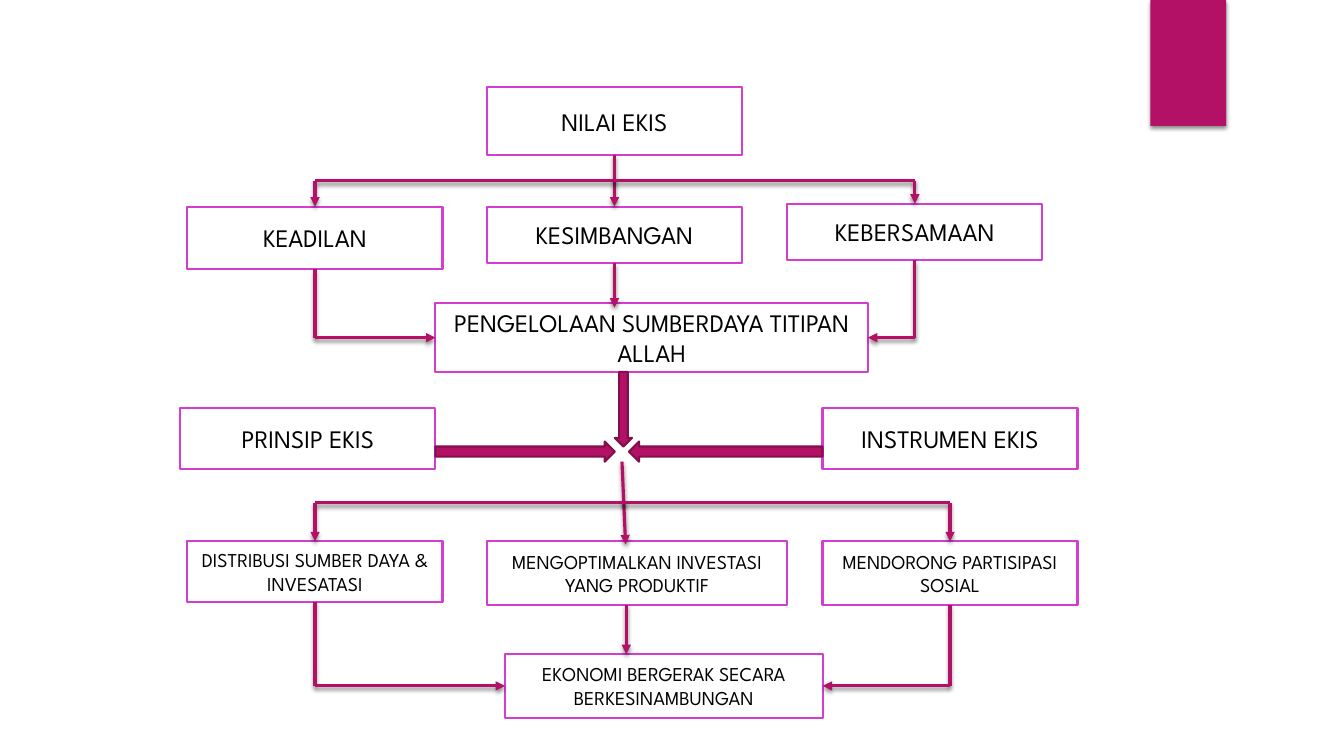
import typing

import lxml.etree
import pptx
import pptx.dml.color
import pptx.enum.shapes
import pptx.enum.text
import pptx.oxml
import pptx.oxml.ns
import pptx.util

# Grid: 100 columns by 100 rows over the slide
WIDE, HIGH = pptx.util.Inches(13.33), pptx.util.Inches(7.5)
FONT = "League Spartan"
PINK, DARK, EDGE = "B31166", "840D4B", "D53DD0"
TOP, LEFT, BASE, RIGHT = range(4)
KIND = pptx.enum.shapes.MSO_SHAPE


class Box(typing.NamedTuple):
    text: str
    col: float
    row: float
    wide: float
    high: float
    size: int = 18

    def port(self, side: int) -> tuple[float, float]:
        """Middle of one side, in grid units."""
        across = {LEFT: 0, RIGHT: 1}.get(side, 0.5)
        down = {TOP: 0, BASE: 1}.get(side, 0.5)
        return self.col + across * self.wide, self.row + down * self.high


class Port(typing.NamedTuple):
    box: str
    side: int


class Point(typing.NamedTuple):
    col: float
    row: float


class Link(typing.NamedTuple):
    start: Port | Point
    end: Port | Point
    head: bool = True


class Arrow(typing.NamedTuple):
    kind: KIND
    col: float
    row: float
    wide: float
    high: float


def x(cols: float) -> int:
    return round(WIDE * cols / 100)


def y(rows: float) -> int:
    return round(HIGH * rows / 100)


def paint(color: pptx.dml.color.ColorFormat, code: str) -> None:
    color.rgb = pptx.dml.color.RGBColor.from_string(code)


def tag(root: lxml.etree._Element, name: str, **attrs: str) -> lxml.etree._Element:
    return lxml.etree.SubElement(root, pptx.oxml.ns.qn(name), attrs)


def shade(item) -> None:
    """Soft shadow just below the item."""
    effect = tag(item._element.spPr, "a:effectLst")
    drop = tag(effect, "a:outerShdw", blurRad="38100", dist="25400",
               dir="5400000", rotWithShape="0")
    tag(tag(drop, "a:srgbClr", val="000000"), "a:alpha", val="45000")


def block(slide, kind: KIND, col: float, row: float, wide: float, high: float,
          fill: str, edge: str | None):
    shape = slide.shapes.add_shape(kind, x(col), y(row), x(wide), y(high))
    shape.fill.solid()
    paint(shape.fill.fore_color, fill)
    if edge:
        paint(shape.line.color, edge)
        shape.line.width = pptx.util.Pt(1.5)
        shape.shadow.inherit = False
    else:
        shape.line.fill.background()
        shade(shape)
    return shape


def draw_box(slide, box: Box):
    shape = block(slide, KIND.RECTANGLE, box.col, box.row, box.wide, box.high,
                  "FFFFFF", EDGE)
    frame = shape.text_frame
    frame.word_wrap = True
    frame.vertical_anchor = pptx.enum.text.MSO_ANCHOR.MIDDLE
    para = frame.paragraphs[0]
    para.alignment = pptx.enum.text.PP_ALIGN.CENTER
    run = para.add_run()
    run.text = box.text
    run.font.name = FONT
    run.font.size = pptx.util.Pt(box.size)
    paint(run.font.color, "000000")
    return shape


def place(end: Port | Point) -> tuple[float, float]:
    return BOXES[end.box].port(end.side) if isinstance(end, Port) else end


def draw_link(slide, link: Link, shapes: dict) -> None:
    (col, row), (to_col, to_row) = place(link.start), place(link.end)
    line = slide.shapes.add_connector(
        pptx.enum.shapes.MSO_CONNECTOR.STRAIGHT, x(col), y(row), x(to_col), y(to_row))
    for end, join in ((link.start, line.begin_connect), (link.end, line.end_connect)):
        if isinstance(end, Port):
            join(shapes[end.box], end.side)
    paint(line.line.color, PINK)
    line.line.width = pptx.util.Pt(2.25)
    if link.head:
        tag(line.line._ln, "a:tailEnd", type="triangle")
    shade(line)


# Boxes, by part of the scheme
STEP, COL1, COL2, COL3 = 18.98, 13.95, 36.23, 61.2
BOXES = {
    "value": Box("NILAI EKIS", COL2, 11.47, STEP, 9.07),
    "just": Box("KEADILAN", COL1, 27.33, STEP, 8.27),
    "balance": Box("KESIMBANGAN", COL2, 27.33, STEP, 7.47),
    "union": Box("KEBERSAMAAN", 58.58, 26.93, STEP, 7.47),
    "trust": Box("PENGELOLAAN SUMBERDAYA TITIPAN ALLAH", 32.4, 40.13, 32.18, 9.07),
    "tool": Box("INSTRUMEN EKIS", COL3, 54, STEP, 8),
    "rule": Box("PRINSIP EKIS", 13.42, 54, STEP, 8),
    "social": Box("MENDORONG PARTISIPASI SOSIAL", COL3, 71.6, STEP, 8.4, 14),
    "invest": Box("MENGOPTIMALKAN INVESTASI YANG PRODUKTIF", COL2, 71.6, 22.35, 8.4, 14),
    "share": Box("DISTRIBUSI SUMBER DAYA & INVESATASI", COL1, 71.6, STEP, 8, 14),
    "goal": Box("EKONOMI BERGERAK SECARA BERKESINAMBUNGAN", 37.58, 86.53, 23.63, 8.4, 14),
}

# Block arrows that meet in the middle
ARROWS = [
    Arrow(KIND.RIGHT_ARROW, 32.4, 58.4, 13.35, 2.67),
    Arrow(KIND.LEFT_ARROW, 46.8, 58.4, 14.4, 2.67),
    Arrow(KIND.DOWN_ARROW, 45.75, 49.2, 1.28, 9.87),
]


def branch(hub: Point, box: str) -> list[Link]:
    """Run level from the hub, then down into the box."""
    bend = Point(BOXES[box].port(TOP)[0], hub.row)
    return [Link(hub, bend, False), Link(bend, Port(box, TOP))]


def merge(box: str, goal: str, side: int) -> list[Link]:
    """Run down from the box, then level into the goal."""
    bend = Point(BOXES[box].port(BASE)[0], BOXES[goal].port(side)[1])
    return [Link(Port(box, BASE), bend, False), Link(bend, Port(goal, side))]


MID = BOXES["value"].port(BASE)[0]
LINKS = [
    Link(Port("value", BASE), Port("balance", TOP)),
    *branch(Point(MID, 23.93), "just"),
    *branch(Point(MID, 23.93), "union"),
    *merge("just", "trust", LEFT),
    *merge("union", "trust", RIGHT),
    Link(Port("balance", BASE), Point(MID, 40.67)),
    Link(Point(46.28, 61.07), Point(46.55, 72)),
    *branch(Point(46.5, 66.53), "share"),
    *branch(Point(46.28, 66.53), "social"),
    *merge("share", "goal", LEFT),
    *merge("social", "goal", RIGHT),
    Link(Point(46.6, 80), Point(46.6, 86.53)),
]


def main() -> None:
    deck = pptx.Presentation()
    deck.slide_width, deck.slide_height = WIDE, HIGH
    slide = deck.slides.add_slide(deck.slide_layouts.get_by_name("Blank"))
    # Corner tab
    block(slide, KIND.RECTANGLE, 85.6, 0, 5.63, 16.67, PINK, None)
    shapes = {name: draw_box(slide, box) for name, box in BOXES.items()}
    for link in LINKS:
        draw_link(slide, link, shapes)
    for arrow in ARROWS:
        block(slide, *arrow, PINK, DARK)
    deck.save("out.pptx")


if __name__ == "__main__":
    main()
